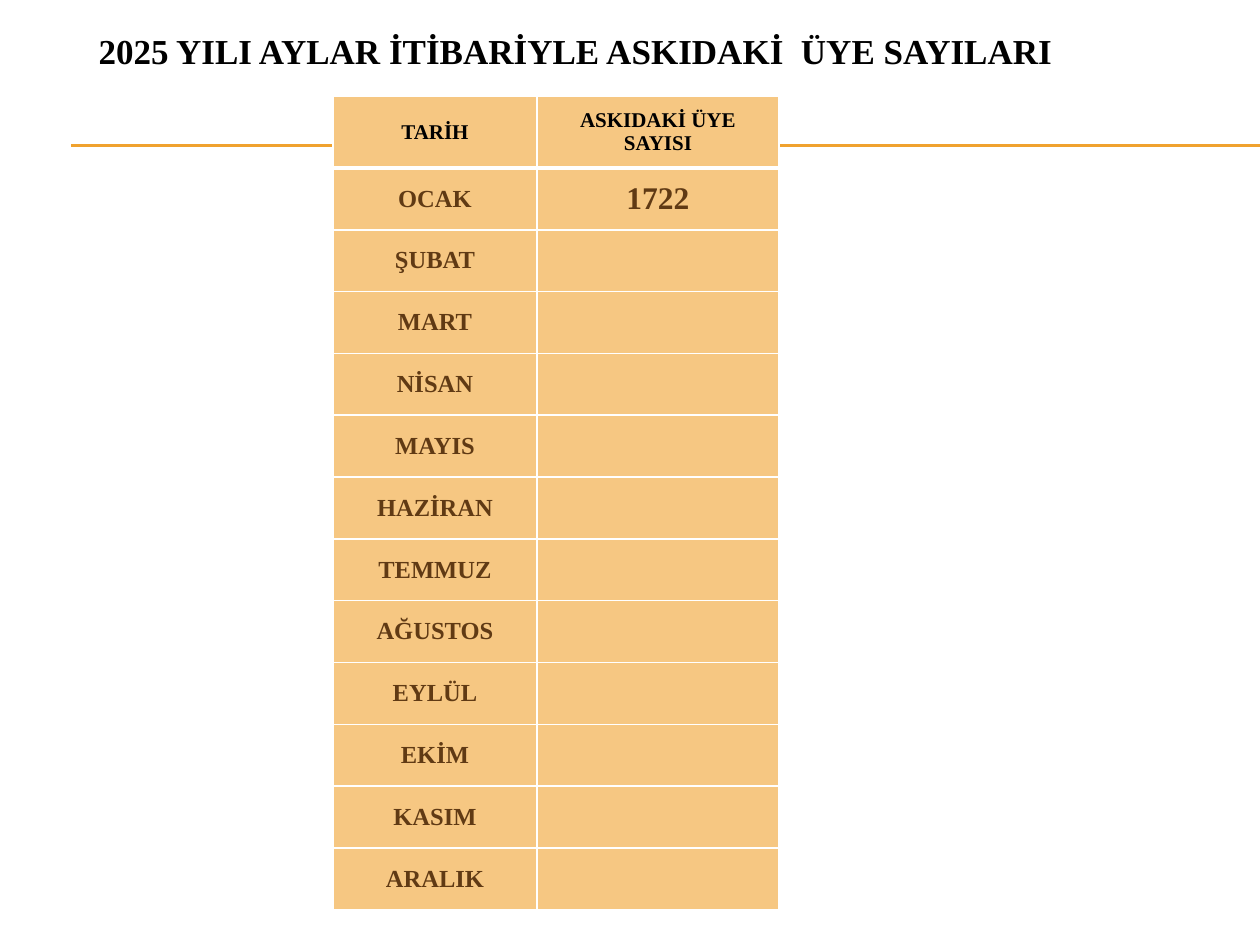
from lxml.etree import SubElement
from pptx import Presentation
from pptx.dml.color import RGBColor
from pptx.enum.shapes import MSO_CONNECTOR
from pptx.enum.text import MSO_ANCHOR, PP_ALIGN
from pptx.oxml import parse_xml
from pptx.oxml.ns import nsdecls, qn
from pptx.util import Pt

EMU_PER_PX = 914400 / 126
COLORS = {
    "rule": "F0A22E",
    "cell": "F6C782",
    "border": "FFFFFF",
    "heading": "000000",
    "body": "603A14",
}
FONT = "Times New Roman"
HEADINGS = ["TARİH", "ASKIDAKİ ÜYE SAYISI"]
MONTHS = ["OCAK", "ŞUBAT", "MART", "NİSAN", "MAYIS", "HAZİRAN", "TEMMUZ",
          "AĞUSTOS", "EYLÜL", "EKİM", "KASIM", "ARALIK"]
MEMBER_COUNTS = {"OCAK": "1722"}


def px(length):
    return round(length * EMU_PER_PX)


def write_centred(frame, text, size, color):
    """Put one bold, centred run into the frame's first paragraph."""
    paragraph = frame.paragraphs[0]
    paragraph.alignment = PP_ALIGN.CENTER
    run = paragraph.add_run()
    run.text = text
    run.font.name = FONT
    run.font.size = Pt(size)
    run.font.bold = True
    run.font.color.rgb = RGBColor.from_string(COLORS[color])


prs = Presentation()
prs.slide_width, prs.slide_height = px(1260), px(945)
slide = prs.slides.add_slide(prs.slide_layouts[5])

# Double rule behind the table
for y in (145, 146):
    rule = slide.shapes.add_connector(
        MSO_CONNECTOR.STRAIGHT, px(71), px(y), px(1260), px(y))
    rule.line.color.rgb = RGBColor.from_string(COLORS["rule"])
    rule.line.width = Pt(0.75)
    SubElement(rule._element.spPr, qn("a:effectLst"))

# Title
title = slide.shapes.title
title.left, title.top, title.width, title.height = px(35), px(6), px(1081), px(90)
title.text_frame.vertical_anchor = MSO_ANCHOR.MIDDLE
title.text_frame.word_wrap = True
write_centred(title.text_frame, "2025 YILI AYLAR İTİBARİYLE ASKIDAKİ  ÜYE SAYILARI",
              20, "heading")

# Monthly table
header_height, months_height = 72, 742
rows = [HEADINGS] + [[month, MEMBER_COUNTS.get(month, "")] for month in MONTHS]
table = slide.shapes.add_table(
    len(rows), len(HEADINGS), px(333), px(96), px(446),
    px(header_height + months_height)).table
for column, width in zip(table.columns, (204, 242)):
    column.width = px(width)
for row in table.rows:
    row.height = px(months_height / len(MONTHS))
table.rows[0].height = px(header_height)

for row_index, row in enumerate(rows):
    for column_index, text in enumerate(row):
        cell = table.cell(row_index, column_index)
        cell.vertical_anchor = MSO_ANCHOR.MIDDLE
        cell.fill.solid()
        cell.fill.fore_color.rgb = RGBColor.from_string(COLORS["cell"])
        if text and row_index == 0:
            write_centred(cell.text_frame, text, 12, "heading")
        elif text:
            write_centred(cell.text_frame, text, (14, 18)[column_index], "body")

        # A thicker border separates the header from the months
        border_widths = {"L": 1, "R": 1,
                         "T": 3 if row_index == 1 else 1,
                         "B": 3 if row_index == 0 else 1}
        cell_properties = cell._tc.get_or_add_tcPr()
        for position, (side, width) in enumerate(border_widths.items()):
            cell_properties.insert(position, parse_xml(
                f'<a:ln{side} {nsdecls("a")} w="{Pt(width)}"><a:solidFill>'
                f'<a:srgbClr val="{COLORS["border"]}"/></a:solidFill></a:ln{side}>'))

prs.save("out.pptx")
